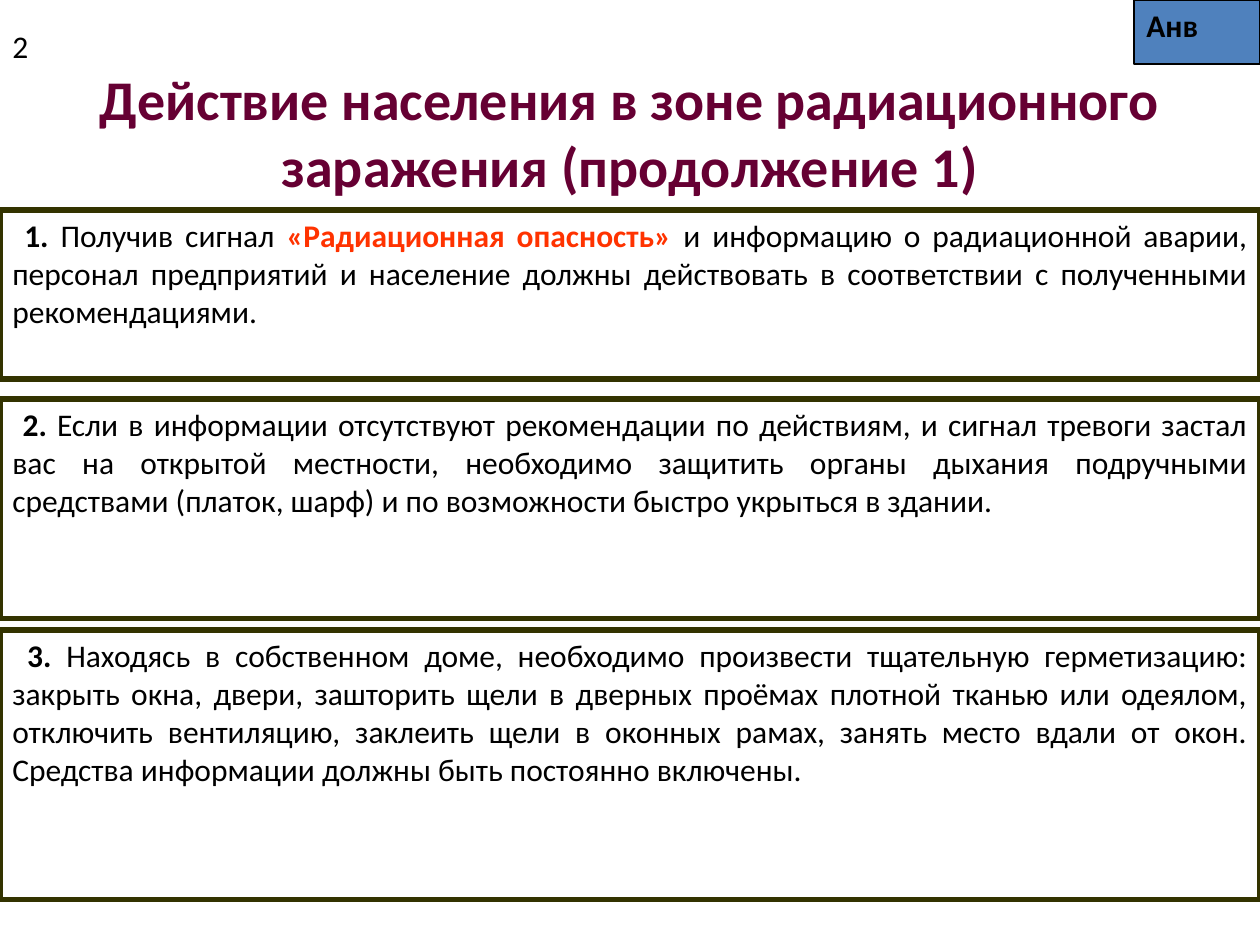
from pptx import Presentation
from pptx import util as u
from pptx.dml.color import RGBColor
from pptx.enum import shapes, text

COLORS = {"title": "660033", "frame": "333300", "alert": "FF3300",
          "text": "000000", "badge": "4F81BD"}
WIDTH, HEIGHT = 10, 7.5
COLS, ROWS = 24, 90  # grid that positions are counted in


class Deck:
    """Holds the style and the current slide."""
    font, size = "Calibri", 18

    def __init__(self):
        self.prs = Presentation()
        self.prs.slide_width, self.prs.slide_height = u.Inches(WIDTH), u.Inches(HEIGHT)
        self.s = self.prs.slides.add_slide(self.prs.slide_layouts[6])

    def place(self, col, row, cols, rows):
        x, y = self.prs.slide_width / COLS, self.prs.slide_height / ROWS
        return [u.Emu(round(v)) for v in (col * x, row * y, cols * x, rows * y)]

    def color(self, name):
        return RGBColor.from_string(COLORS[name])

    def add_runs(self, sp, runs, align, anchor=text.MSO_ANCHOR.TOP, size=None):
        """Fill a shape with one paragraph of (words, bold, colour) runs."""
        tf = sp.text_frame
        tf.word_wrap = True
        tf.vertical_anchor = anchor
        p = tf.paragraphs[0]
        p.alignment = align
        for words, bold, color in runs:
            r = p.add_run()
            r.text = words
            r.font.name, r.font.size, r.font.bold = self.font, u.Pt(size or self.size), bold
            r.font.color.rgb = self.color(color)

    def label(self, box, runs, align=text.PP_ALIGN.LEFT, **style):
        self.add_runs(self.s.shapes.add_textbox(*self.place(*box)), runs, align, **style)

    def panel(self, box, runs, line, width, fill=None, align=text.PP_ALIGN.LEFT):
        sp = self.s.shapes.add_shape(shapes.MSO_SHAPE.RECTANGLE, *self.place(*box))
        sp.shadow.inherit = False
        if fill:
            sp.fill.solid()
            sp.fill.fore_color.rgb = self.color(fill)
        else:
            sp.fill.background()
        sp.line.color.rgb, sp.line.width = self.color(line), u.Pt(width)
        self.add_runs(sp, runs, align)


# Rules: top row, height in rows, runs after the number
RULES = [
    (20, 16.1, [
        (" Получив сигнал ", False, "text"),
        ("«Радиационная опасность»", True, "alert"),
        (" и информацию о радиационной аварии, персонал предприятий и население "
         "должны действовать в соответствии с полученными рекомендациями.", False, "text")]),
    (38, 20.9, [
        (" Если в информации отсутствуют рекомендации по действиям, и сигнал тревоги "
         "застал вас на открытой местности, необходимо защитить органы дыхания "
         "подручными средствами (платок, шарф) и по возможности быстро укрыться "
         "в здании.", False, "text")]),
    (60, 25.7, [
        (" Находясь в собственном доме, необходимо произвести тщательную герметизацию: "
         "закрыть окна, двери, зашторить щели в дверных проёмах плотной тканью или "
         "одеялом, отключить вентиляцию, заклеить щели в оконных рамах, занять место "
         "вдали от окон. Средства информации должны быть постоянно включены.",
         False, "text")]),
]


def main():
    deck = Deck()

    # Title
    deck.label((0, 5, COLS, 15),
               [("Действие населения в зоне радиационного заражения (продолжение 1)",
                 True, "title")],
               align=text.PP_ALIGN.CENTER, anchor=text.MSO_ANCHOR.MIDDLE, size=32)

    # Framed rules
    for number, (row, rows, runs) in enumerate(RULES, 1):
        start = [(" ", False, "text"), (f"{number}.", True, "text")]
        deck.panel((0, row, COLS, rows), start + runs, "frame", 3,
                   align=text.PP_ALIGN.JUSTIFY)

    # Page number and corner badge
    deck.label((0, 2, 1, 6), [("2", False, "text")])
    deck.panel((21.6, 0, 2.4, 6.1), [("Анв", True, "text")], "text", 0.75, fill="badge")

    deck.prs.save("out.pptx")


if __name__ == "__main__":
    main()
